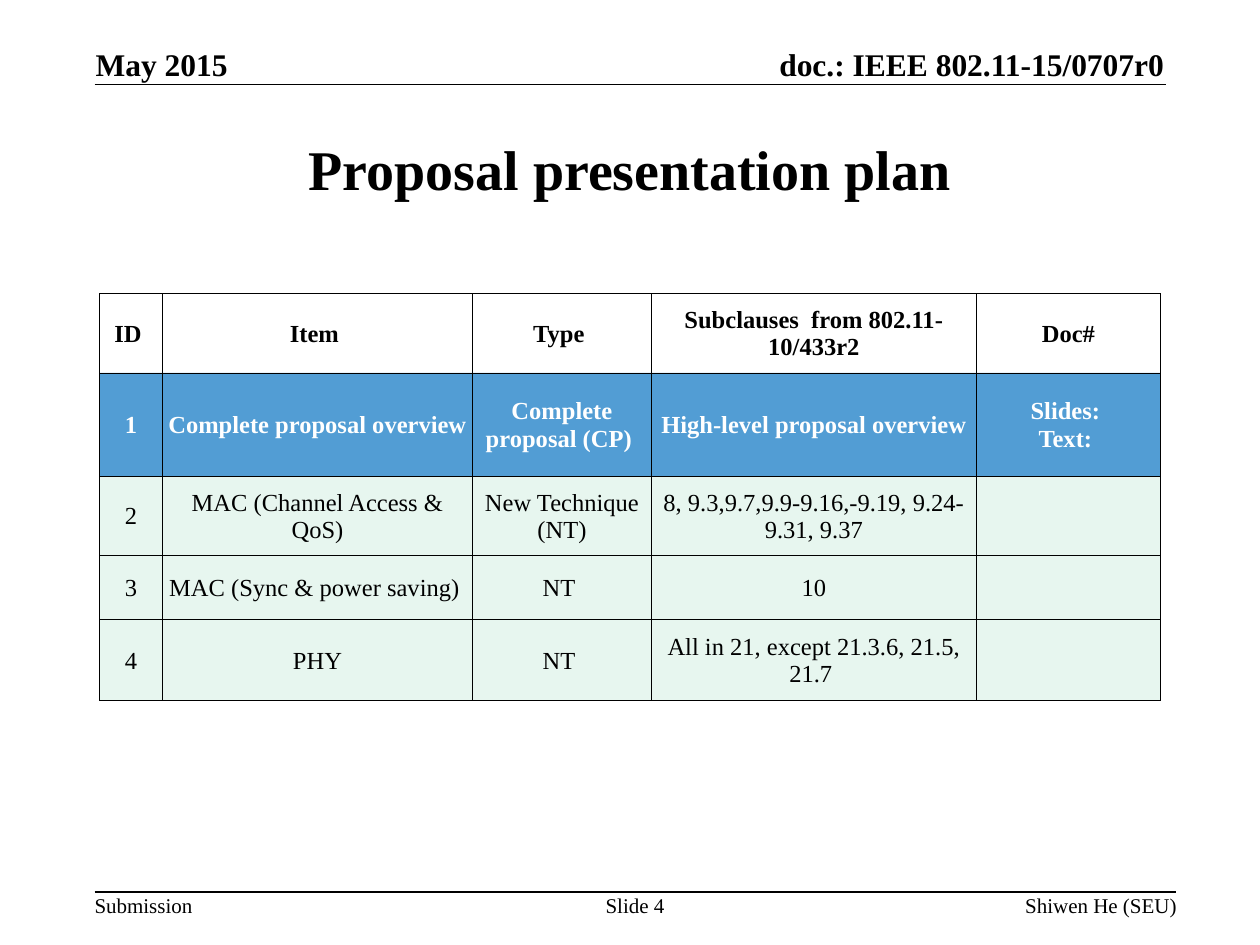
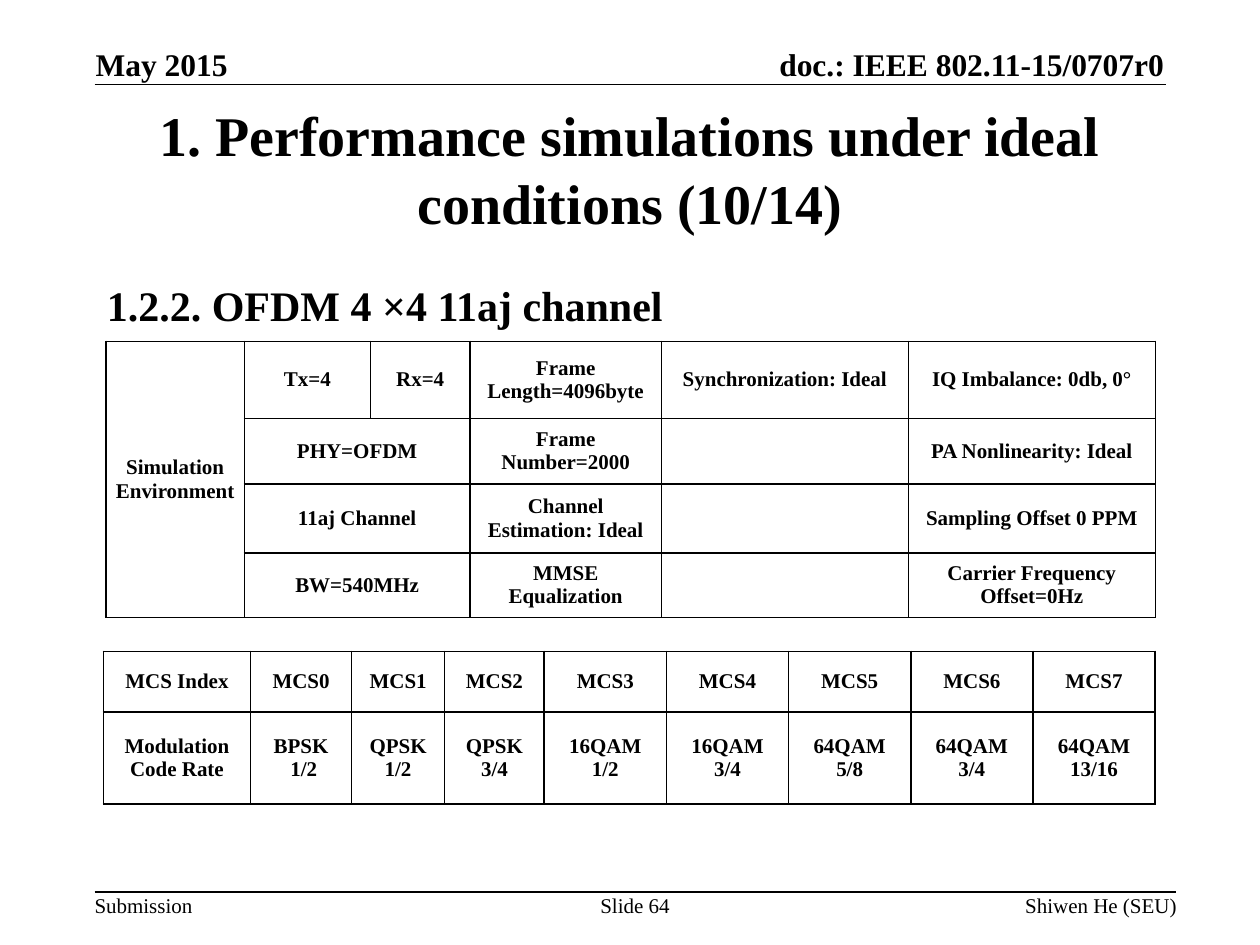
from lxml import etree
from pptx import Presentation
from pptx.dml.color import RGBColor
from pptx.enum.shapes import MSO_CONNECTOR
from pptx.enum.text import MSO_ANCHOR, MSO_AUTO_SIZE, PP_ALIGN
from pptx.oxml.ns import qn
from pptx.util import Inches, Pt

BLACK = RGBColor(0x00, 0x00, 0x00)
WHITE = RGBColor(0xFF, 0xFF, 0xFF)
BLUE = RGBColor(0x00, 0x70, 0xC0)
MINT = RGBColor(0xE7, 0xF6, 0xEF)
FONT = "Times New Roman"
LEFT, CENTER, RIGHT = PP_ALIGN.LEFT, PP_ALIGN.CENTER, PP_ALIGN.RIGHT
TOP, MIDDLE, BOTTOM = MSO_ANCHOR.TOP, MSO_ANCHOR.MIDDLE, MSO_ANCHOR.BOTTOM
STRAIGHT = MSO_CONNECTOR.STRAIGHT
NO_FIT, GROW = MSO_AUTO_SIZE.NONE, MSO_AUTO_SIZE.SHAPE_TO_FIT_TEXT
TITLE_ONLY = 5

PLAN = [
    ["ID ", "Item ", "Type ", "Subclauses  from 802.11-10/433r2", "Doc#"],
    ["1", "Complete proposal overview", "Complete proposal (CP) ",
     "High-level proposal overview", "Slides: \vText: "],
    ["2", "MAC (Channel Access & QoS)", "New Technique (NT)",
     "8, 9.3,9.7,9.9-9.16,-9.19, 9.24-9.31, 9.37", ""],
    ["3", "MAC (Sync & power saving) ", "NT ", "10", ""],
    ["4", "PHY", "NT ", "All in 21, except 21.3.6, 21.5, 21.7 ", ""],
]
ENVIRONMENT = [
    ["Simulation Environment", "Tx=4", "Rx=4", "Frame Length=4096byte",
     "Synchronization: Ideal", "IQ Imbalance: 0db, 0°"],
    ["", "PHY=OFDM", "", "Frame Number=2000", "", "PA Nonlinearity: Ideal"],
    ["", "11aj Channel", "", "Channel Estimation: Ideal", "", "Sampling Offset 0 PPM"],
    ["", "BW=540MHz", "", "MMSE Equalization", "", "Carrier Frequency Offset=0Hz"],
]
CODE_RATES = ["BPSK\n 1/2", "QPSK\n1/2", "QPSK\n3/4", "16QAM\n1/2",
              "16QAM\n3/4", "64QAM\n5/8", "64QAM\n3/4", "64QAM\n13/16"]
MCS = [
    ["MCS Index"] + [f"MCS{i}" for i in range(len(CODE_RATES))],
    ["Modulation\nCode Rate"] + CODE_RATES,
]


def style(font, size, bold, color=BLACK):
    font.name, font.size, font.bold = FONT, Pt(size), bold
    font.color.rgb = color


def write(tf, text, size, bold=False, align=LEFT, color=BLACK):
    for i, line in enumerate(text.split("\n")):
        p = tf.paragraphs[0] if i == 0 else tf.add_paragraph()
        p.alignment = align
        style(p.font, size, bold, color)
        for j, part in enumerate(line.split("\v")):
            if j:
                p.add_line_break()
            if part:
                r = p.add_run()
                r.text = part
                style(r.font, size, bold, color)


def add_label(s, box, text, size, bold=False, align=LEFT, anchor=TOP):
    tf = s.shapes.add_textbox(*map(Inches, box)).text_frame
    tf.margin_left = tf.margin_right = tf.margin_top = tf.margin_bottom = 0
    tf.vertical_anchor = anchor
    tf.word_wrap, tf.auto_size = False, GROW
    write(tf, text, size, bold, align)


def add_rule(s, left, right, y):
    line = s.shapes.add_connector(STRAIGHT, Inches(left), Inches(y), Inches(right), Inches(y))
    line.line.color.rgb = BLACK
    line.line.width = Pt(1)
    etree.SubElement(line._element.spPr, qn("a:effectLst"))


def add_header(s):
    add_label(s, (0.76, 0.36, 1.06, 0.3), "May 2015", 18, True, anchor=BOTTOM)
    add_label(s, (5.65, 0.36, 3.59, 0.3), "doc.: IEEE 802.11-15/0707r0", 18, True, RIGHT, BOTTOM)
    add_rule(s, 0.75, 9.25, 0.67)


def add_footer(s, number):
    add_rule(s, 0.75, 9.33, 7.08)
    add_label(s, (0.75, 7.08, 0.78, 0.2), "Submission", 12)
    add_label(s, (4.75, 7.08, 0.58, 0.2), f"Slide {number}", 12, align=CENTER)
    add_label(s, (7.49, 7.08, 1.85, 0.2), "Shiwen He (SEU)", 12, align=RIGHT)


def add_page(prs, title, box, number):
    s = prs.slides.add_slide(prs.slide_layouts[TITLE_ONLY])
    sp = s.shapes.title
    sp.left, sp.top, sp.width, sp.height = map(Inches, box)
    tf = sp.text_frame
    tf.word_wrap, tf.auto_size = True, NO_FIT
    tf.vertical_anchor = MIDDLE
    write(tf, title, 32, True, CENTER)
    add_header(s)
    add_footer(s, number)
    return s


def add_borders(cell, width):
    tc_pr = cell._tc.get_or_add_tcPr()
    for side in ("lnL", "lnR", "lnT", "lnB"):
        ln = etree.SubElement(tc_pr, qn(f"a:{side}"), w=str(Pt(width)))
        fill = etree.SubElement(ln, qn("a:solidFill"))
        etree.SubElement(fill, qn("a:srgbClr"), val=str(BLACK))


def fill_cell(cell, color, opacity):
    if color is None:
        cell.fill.background()
        return
    cell.fill.solid()
    cell.fill.fore_color.rgb = color
    if opacity < 100:
        clr = cell._tc.tcPr.find(f"{qn('a:solidFill')}/{qn('a:srgbClr')}")
        etree.SubElement(clr, qn("a:alpha"), val=str(opacity * 1000))


def add_grid(s, left, top, cols, rows, data, size, border, margins, row_looks, merges=()):
    frame = s.shapes.add_table(len(rows), len(cols), Inches(left), Inches(top),
                               Inches(sum(cols)), Inches(sum(rows)))
    table = frame.table
    table.first_row = table.horz_banding = False
    for col, width in zip(table.columns, cols):
        col.width = Inches(width)
    for row, height, texts, look in zip(table.rows, rows, data, row_looks):
        row.height = Inches(height)
        fill, opacity, color, bold = look
        for cell, text in zip(row.cells, texts):
            cell.margin_left = cell.margin_right = Inches(margins[0])
            cell.margin_top, cell.margin_bottom = Inches(margins[1]), 0
            cell.vertical_anchor = MIDDLE
            add_borders(cell, border)
            fill_cell(cell, fill, opacity)
            write(cell.text_frame, text, size, bold, CENTER, color)
    for r1, c1, r2, c2 in merges:
        table.cell(r1, c1).merge(table.cell(r2, c2))


def add_plan_slide(prs):
    s = add_page(prs, "Proposal presentation plan", (0.75, 0.75, 8.5, 1.17), 4)
    looks = [(None, 100, BLACK, True), (BLUE, 68, WHITE, True)] + [(MINT, 100, BLACK, False)] * 3
    add_grid(s, 0.79, 2.33, [0.5, 2.46, 1.42, 2.58, 1.46], [0.63, 0.82, 0.63, 0.51, 0.64],
             PLAN, 14, 0.5, (0.01, 0.01), looks)


def add_simulation_slide(prs):
    s = add_page(prs, "1. Performance simulations under ideal conditions (10/14)",
                 (0.69, 0.61, 8.62, 1.45), 64)
    tf = s.shapes.add_textbox(Inches(0.75), Inches(2.17), Inches(8.5), Inches(0.5)).text_frame
    tf.word_wrap = True
    write(tf, "1.2.2. OFDM 4 ×4 11aj channel", 24, True)
    tf.paragraphs[0].space_before = Pt(4.8)
    looks = [(None, 100, BLACK, True)] * 4
    merges = [(0, 0, 3, 0)] + [(row, 1, row, 2) for row in range(1, 4)]
    add_grid(s, 0.84, 2.71, [1.1, 1, 0.79, 1.52, 1.96, 1.96], [0.61, 0.52, 0.55, 0.51],
             ENVIRONMENT, 12, 1, (0.07, 0), looks, merges)
    add_grid(s, 0.82, 5.17, [1.17, 0.8, 0.74, 0.79] + [0.97] * 5, [0.48, 0.73],
             MCS, 12, 1, (0.07, 0), looks)


def main():
    prs = Presentation()
    prs.slide_width, prs.slide_height = Inches(10), Inches(7.5)
    add_plan_slide(prs)
    add_simulation_slide(prs)
    prs.save("out.pptx")


if __name__ == "__main__":
    main()
